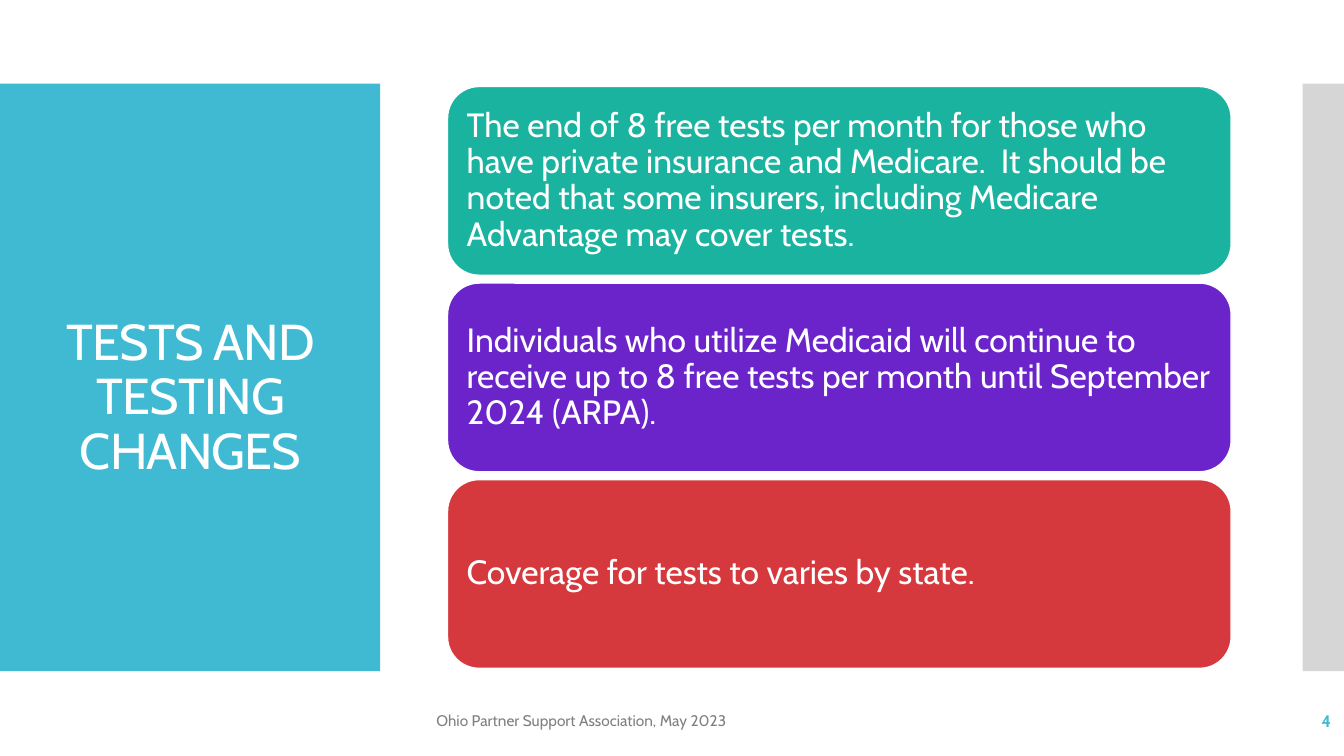
import pptx
import pptx.util
import pptx.dml.color
import pptx.enum.shapes
import pptx.enum.text
from dataclasses import dataclass

Inches = pptx.util.Inches
Shape = pptx.enum.shapes.MSO_SHAPE
Align = pptx.enum.text.PP_ALIGN

# Content
TITLE = "TESTS AND TESTING CHANGES"
FOOTER = "Ohio Partner Support Association, May 2023"
PAGE_NUMBER = "4"
CARDS = [
    ("The end of 8 free tests per month for those who have private insurance "
     "and Medicare.  It should be noted that some insurers, including Medicare "
     "Advantage may cover tests.", "1AB39F"),
    ("Individuals who utilize Medicaid will continue to receive up to 8 free "
     "tests per month until September 2024 (ARPA).", "6A24CA"),
    ("Coverage for tests to varies by state.", "D5393D"),
]


@dataclass(frozen=True)
class Theme:
    font: str = "Cabin"
    accent: str = "40BAD2"
    side_bar: str = "D6D6D6"
    white: str = "FFFFFF"
    muted: str = "808080"
    title_size: int = 36
    card_size: int = 24
    footer_size: int = 11
    number_size: int = 12


THEME = Theme()

# Layout, in inches
SLIDE_WIDTH, SLIDE_HEIGHT = 13.33, 7.5
BAND_TOP, BAND_HEIGHT = 0.83, 5.83
PANEL_WIDTH, BAR_LEFT = 3.77, 12.92
CARD_LEFT, CARD_TOP, CARD_WIDTH, CARD_HEIGHT = 4.44, 0.86, 7.77, 1.87
CARD_STEP = 1.95
FOOTER_TOP, FOOTER_HEIGHT = 6.95, 0.4


def rgb(value):
    return pptx.dml.color.RGBColor.from_string(value)


def write_text(shape, text, *, size, color, align=Align.LEFT, bold=False,
               line_spacing=1.0, tracking=None, inset=(0.1, 0.05)):
    frame = shape.text_frame
    frame.word_wrap = True
    frame.vertical_anchor = pptx.enum.text.MSO_ANCHOR.MIDDLE
    frame.margin_left = frame.margin_right = Inches(inset[0])
    frame.margin_top = frame.margin_bottom = Inches(inset[1])
    paragraph = frame.paragraphs[0]
    paragraph.alignment = align
    paragraph.line_spacing = line_spacing
    run = paragraph.add_run()
    run.text = text
    run.font.name = THEME.font
    run.font.size = pptx.util.Pt(size)
    run.font.bold = bold
    run.font.color.rgb = rgb(color)
    if tracking is not None:
        run.font._element.set("spc", str(round(tracking * 100)))


def add_block(slide, kind, box, fill, outline=None):
    shape = slide.shapes.add_shape(kind, *map(Inches, box))
    shape.shadow.inherit = False
    shape.fill.solid()
    shape.fill.fore_color.rgb = rgb(fill)
    if outline:
        shape.line.color.rgb = rgb(outline)
        shape.line.width = pptx.util.Pt(0.85)
    else:
        shape.line.fill.background()
    return shape


def add_label(slide, box, text, **style):
    write_text(slide.shapes.add_textbox(*map(Inches, box)), text, **style)


def main():
    presentation = pptx.Presentation()
    presentation.slide_width = Inches(SLIDE_WIDTH)
    presentation.slide_height = Inches(SLIDE_HEIGHT)
    slide = presentation.slides.add_slide(presentation.slide_layouts[6])

    # Title panel and side bar
    add_block(slide, Shape.RECTANGLE,
              (0, BAND_TOP, PANEL_WIDTH, BAND_HEIGHT), THEME.accent)
    add_block(slide, Shape.RECTANGLE,
              (BAR_LEFT, BAND_TOP, SLIDE_WIDTH - BAR_LEFT, BAND_HEIGHT),
              THEME.side_bar)
    add_label(slide, (0.28, 1.44, 3.22, 5.03), TITLE, size=THEME.title_size,
              color=THEME.white, align=Align.CENTER, line_spacing=0.9,
              tracking=-0.6)

    # Stacked cards
    for index, (text, fill) in enumerate(CARDS):
        top = CARD_TOP + index * CARD_STEP
        card = add_block(slide, Shape.ROUNDED_RECTANGLE,
                         (CARD_LEFT, top, CARD_WIDTH, CARD_HEIGHT),
                         fill, THEME.white)
        write_text(card, text, size=THEME.card_size, color=THEME.white,
                   line_spacing=0.9, inset=(0.1, 0.1))

    # Footer and page number
    add_label(slide, (4.23, FOOTER_TOP, 6.46, FOOTER_HEIGHT), FOOTER,
              size=THEME.footer_size, color=THEME.muted)
    add_label(slide, (11.63, FOOTER_TOP, 1.67, FOOTER_HEIGHT), PAGE_NUMBER,
              size=THEME.number_size, color=THEME.accent, align=Align.RIGHT,
              bold=True)

    presentation.save("out.pptx")


if __name__ == "__main__":
    main()
